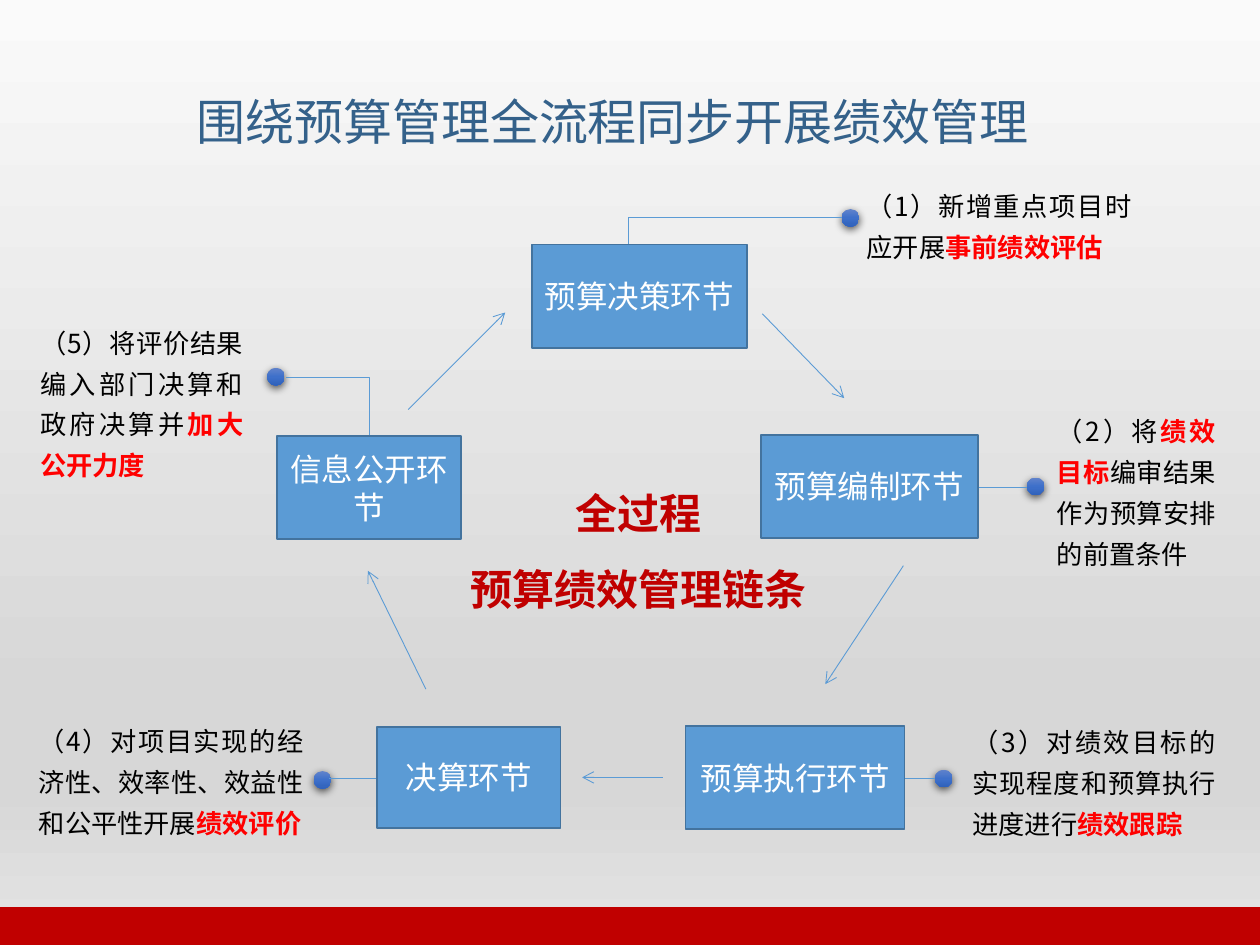
"""Build the slide on the performance chain around the budget process."""
import dataclasses

import lxml.etree
import pptx
import pptx.dml.color
import pptx.enum.lang
import pptx.enum.shapes
import pptx.enum.text
import pptx.oxml.ns
import pptx.util

COLUMNS, ROWS = 100, 75
CELL = pptx.util.Inches(0.1)
SHAPES = pptx.enum.shapes.MSO_SHAPE
LINKS = pptx.enum.shapes.MSO_CONNECTOR
ALIGN = pptx.enum.text.PP_ALIGN
ANCHOR = pptx.enum.text.MSO_ANCHOR
GROW = pptx.enum.text.MSO_AUTO_SIZE.SHAPE_TO_FIT_TEXT
CHINESE = pptx.enum.lang.MSO_LANGUAGE_ID.SIMPLIFIED_CHINESE
qn = pptx.oxml.ns.qn


@dataclasses.dataclass(frozen=True)
class Theme:
    """Colours, fonts and type sizes of the slide."""
    text_font: str = "Noto Sans CJK SC"
    box_font: str = "Calibri"
    title_size: int = 28
    centre_size: int = 24
    box_size: int = 18
    note_size: int = 15
    title: str = "34618A"
    deep_red: str = "C00000"
    accent: str = "FF0000"
    ink: str = "000000"
    white: str = "FFFFFF"
    blue: str = "5B9BD5"
    edge: str = "43739E"
    sky: tuple = ((0, "FAFAFA"), (74, "D7D7D7"), (83, "D7D7D7"), (100, "E4E4E4"))
    bead: tuple = ((0, "6183CB"), (50, "3E70CA"), (100, "3062BB"))


THEME = Theme()

BOXES = [
    ("预算决策环节", (42.2, 19.4, 17.1, 8.2)),
    ("预算编制环节", (60.4, 34.5, 17.2, 8.2)),
    ("预算执行环节", (54.4, 57.6, 17.4, 8.2)),
    ("决算环节", (29.9, 57.7, 14.6, 8)),
    ("信息公开环节", (22, 34.6, 14.6, 8.2)),
]
NOTES = [
    ("（1）新增重点项目时应开展*事前绩效评估*", (67.8, 13.9, 23, 7.3)),
    ("（2）将*绩效目标*编审结果作为预算安排的前置条件", (82.9, 31.7, 14.6, 14.1)),
    ("（3）对绩效目标的实现程度和预算执行进度进行*绩效跟踪*", (76.2, 56.4, 21.3, 10.9)),
    ("（4）对项目实现的经济性、效率性、效益性和公平性开展*绩效评价*", (2.1, 56.3, 23, 10.9)),
    ("（5）将评价结果编入部门决算和政府决算并*加大公开力度*", (2.2, 24.7, 18.1, 14.1)),
]
LEADERS = [
    (LINKS.ELBOW, (49.9, 19.4), (66.8, 17.3)),
    (LINKS.STRAIGHT, (77.7, 38.7), (81.5, 38.7)),
    (LINKS.STRAIGHT, (70.4, 61.8), (74.2, 61.8)),
    (LINKS.STRAIGHT, (29.9, 61.8), (26.1, 61.8)),
    (LINKS.ELBOW, (29.3, 34.6), (22.7, 30)),
]
BEADS = [(66.8, 16.6), (81.5, 37.9), (74.2, 61.1), (24.9, 61.2), (21.2, 29.2)]
BEAD_SIZE = 1.4
ARROWS = [
    ((60.5, 24.9), (67, 31.6)),
    ((71.7, 44.9), (65.5, 54.3)),
    ((52.6, 61.7), (46.2, 61.7)),
    ((33.8, 54.7), (29.2, 45.3)),
    ((32.4, 32.5), (40.1, 24.8)),
]


def grid(*lengths):
    """Turn columns or rows into slide lengths."""
    return [round(length * CELL) for length in lengths]


def rgb(value):
    """Return a colour object for a hex value."""
    return pptx.dml.color.RGBColor.from_string(value)


def apply(target, formats):
    """Set every attribute named in a dict of format values."""
    for name, value in formats.items():
        setattr(target, name, value)


def child(parent, tag, **attributes):
    """Append an XML element with attributes."""
    values = {name: str(value) for name, value in attributes.items()}
    return lxml.etree.SubElement(parent, qn(tag), values)


def shade(holder, stops):
    """Replace a solid fill by a vertical gradient."""
    gradient = lxml.etree.Element(qn("a:gradFill"), rotWithShape="1")
    stop_list = child(gradient, "a:gsLst")
    for position, colour in stops:
        stop = child(stop_list, "a:gs", pos=position * 1000)
        child(stop, "a:srgbClr", val=colour)
    child(gradient, "a:lin", ang=5400000, scaled=0)
    holder.replace(holder.find(qn("a:solidFill")), gradient)


def add_shadow(effects, alpha, blur, distance):
    """Put a downward black shadow in an effect list."""
    shadow = child(effects, "a:outerShdw", blurRad=pptx.util.Pt(blur),
                   dist=pptx.util.Pt(distance), dir=5400000, algn="ctr", rotWithShape=0)
    child(child(shadow, "a:srgbClr", val="000000"), "a:alpha", val=alpha * 1000)


def add_span(para, text, size, colour, bold=False, font=THEME.text_font):
    """Add one formatted run to a paragraph."""
    span = para.add_run()
    span.text = text
    apply(span.font, {"size": pptx.util.Pt(size), "bold": bold, "name": font,
                      "language_id": CHINESE})
    span.font.color.rgb = rgb(colour)
    latin = span.font._element.find(qn("a:latin"))
    latin.addnext(lxml.etree.Element(qn("a:ea"), typeface=THEME.text_font))
    return span


def add_title(page, text):
    """Place and format the title placeholder."""
    box = page.shapes.title
    apply(box, dict(zip(("left", "top", "width", "height"), grid(14.6, 6.8, 68.4, 5.7))))
    apply(box.text_frame, {"word_wrap": True, "auto_size": GROW,
                           "vertical_anchor": ANCHOR.TOP})
    para = box.text_frame.paragraphs[0]
    para.alignment = ALIGN.LEFT
    span = add_span(para, text, THEME.title_size, THEME.title)
    effects = lxml.etree.Element(qn("a:effectLst"))
    add_shadow(effects, 40, 3, 3)
    span.font._element.find(qn("a:solidFill")).addnext(effects)


def add_text(page, place, lines, size, colours, wrap, bold, para_formats):
    """Add a text box whose starred parts are bold in the second colour."""
    frame = page.shapes.add_textbox(*grid(*place)).text_frame
    apply(frame, {"word_wrap": wrap, "auto_size": GROW})
    for index, line in enumerate(lines):
        para = frame.add_paragraph() if index else frame.paragraphs[0]
        apply(para, para_formats)
        for order, part in enumerate(line.split("*")):
            if part:
                add_span(para, part, size, colours[order % 2], bold or order % 2 == 1)


def add_block(page, preset, place, fill, edge=None):
    """Add a flat filled shape, with an edge if a colour is given."""
    block = page.shapes.add_shape(preset, *grid(*place))
    block.shadow.inherit = False
    block.fill.solid()
    block.fill.fore_color.rgb = rgb(fill)
    if edge:
        block.line.color.rgb = rgb(edge)
        block.line.width = pptx.util.Pt(1)
    else:
        block.line.fill.background()
    return block


def add_box(page, text, place):
    """Add a process step."""
    box = add_block(page, SHAPES.RECTANGLE, place, THEME.blue, THEME.edge)
    apply(box.text_frame, {"word_wrap": True, "vertical_anchor": ANCHOR.MIDDLE})
    para = box.text_frame.paragraphs[0]
    para.alignment = ALIGN.CENTER
    add_span(para, text, THEME.box_size, THEME.white, font=THEME.box_font)


def add_bead(page, left, top):
    """Add a shaded round end for a leader."""
    place = (left, top, BEAD_SIZE, BEAD_SIZE)
    bead = add_block(page, SHAPES.OVAL, place, THEME.bead[0][1])
    properties = bead._element.spPr
    shade(properties, THEME.bead)
    add_shadow(properties.find(qn("a:effectLst")), 63, 4.5, 1.5)


def add_link(page, kind, start, end, arrow=False):
    """Add a thin connector; an elbow turns right above its start."""
    link = page.shapes.add_connector(kind, *grid(*start, *end))
    link.line.color.rgb = rgb(THEME.blue)
    link.line.width = pptx.util.Pt(0.5)
    properties = link._element.spPr
    child(properties, "a:effectLst")
    if arrow:
        child(properties.find(qn("a:ln")), "a:tailEnd", type="arrow")
    if kind == LINKS.ELBOW:
        geometry = properties.find(qn("a:prstGeom"))
        child(geometry.find(qn("a:avLst")), "a:gd", name="adj1", fmla="val 0")


def main():
    """Build and save the slide."""
    deck = pptx.Presentation()
    apply(deck, dict(zip(("slide_width", "slide_height"), grid(COLUMNS, ROWS))))
    page = deck.slides.add_slide(deck.slide_layouts[5])
    page.background.fill.solid()
    shade(page._element.cSld.find(qn("p:bg")).find(qn("p:bgPr")), THEME.sky)
    add_block(page, SHAPES.RECTANGLE, (0, 72, COLUMNS, 3), THEME.deep_red)
    add_title(page, "围绕预算管理全流程同步开展绩效管理")
    add_text(page, (36.2, 36.2, 28.9, 13.1), ["全过程", "预算绩效管理链条"],
             THEME.centre_size, (THEME.deep_red,), False, True,
             {"alignment": ALIGN.CENTER, "line_spacing": 1.5})
    for text, place in NOTES:
        add_text(page, place, [text], THEME.note_size, (THEME.ink, THEME.accent), True, False,
                 {"alignment": ALIGN.JUSTIFY, "line_spacing": 1.3})
    for bead in BEADS:
        add_bead(page, *bead)
    for leader in LEADERS:
        add_link(page, *leader)
    for box in BOXES:
        add_box(page, *box)
    for start, end in ARROWS:
        add_link(page, LINKS.STRAIGHT, start, end, arrow=True)
    deck.save("out.pptx")


if __name__ == "__main__":
    main()
